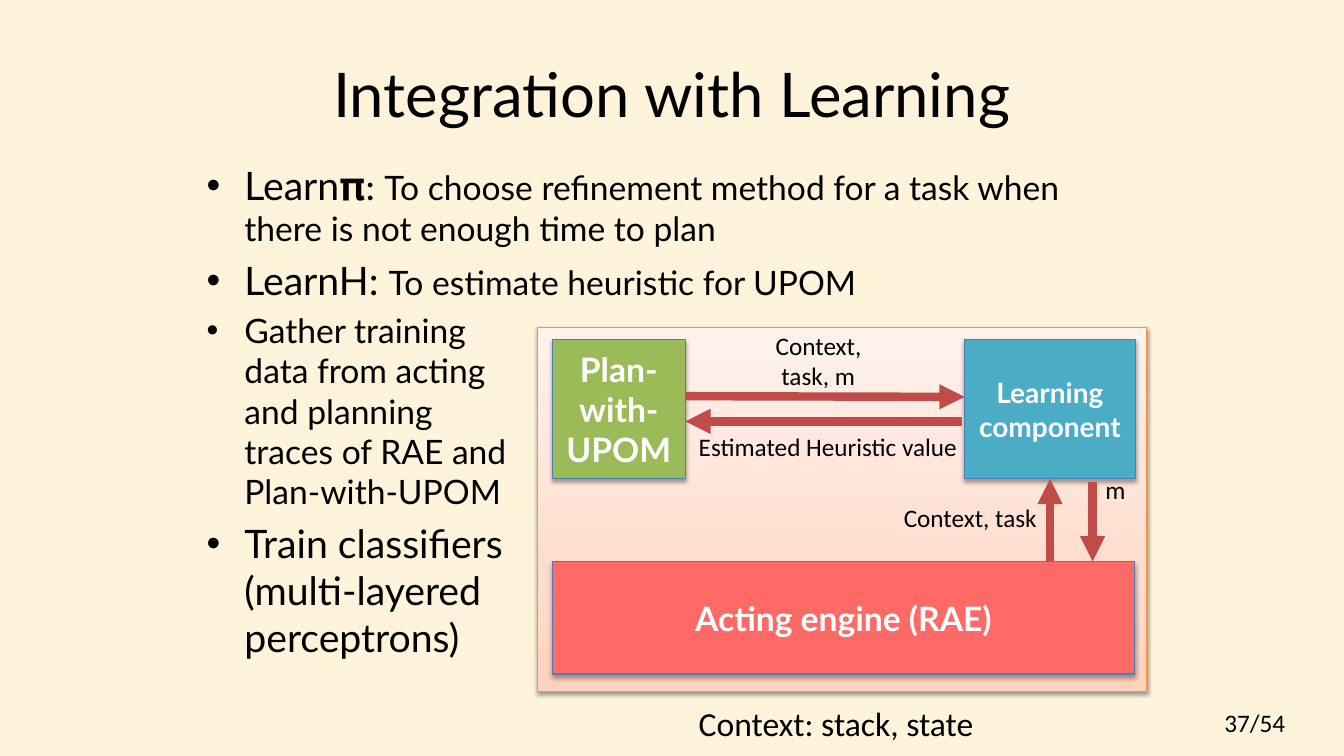
from lxml import etree
from pptx import Presentation
from pptx.dml.color import RGBColor
from pptx.enum.shapes import MSO_CONNECTOR, MSO_SHAPE
from pptx.enum.text import MSO_ANCHOR, PP_ALIGN
from pptx.oxml import parse_xml
from pptx.oxml.ns import nsdecls, qn
from pptx.util import Pt

RECTANGLE = MSO_SHAPE.RECTANGLE
STRAIGHT = MSO_CONNECTOR.STRAIGHT
CENTER = PP_ALIGN.CENTER
MIDDLE = MSO_ANCHOR.MIDDLE
BOTTOM_SIDE = 2
TITLE_ONLY = 5
BLACK, WHITE, ARROW_RED = "000000", "FFFFFF", "BF4C48"

BULLETS = [
    [("Learn", 28, "Lato"), ("𝛑: ", 28, "Calibri"),
     ("To choose refinement method for a task when there is not enough time to plan", 24, "Lato")],
    [("LearnH: ", 28, "Lato"), ("To estimate heuristic for UPOM", 24, "Lato")],
    [("Gather training\ndata from acting\nand planning\ntraces of RAE and\nPlan-with-UPOM", 24, "Lato")],
    [("Train classifiers\n(multi-layered\nperceptrons)", 28, "Lato")],
]
LABELS = [
    ("Context, task", 18, (638.5, 355.5, 122, 29)),
    ("m", 18, (782.5, 335.5, 122, 29)),
    ("Context,\n task, m", 18, (547, 232.5, 122, 51)),
    ("Estimated Heuristic value", 18, (492, 304.5, 250, 29)),
    ("Context: stack, state", 24, (492, 498.5, 274, 36)),
    ("37/54", 18, (867.5, 502, 88.5, 29)),
]
PANEL_STOPS = [(0, "FFD2BD"), (35, "FFDED0"), (100, "FFF2ED")]


def color(value):
    return RGBColor.from_string(value)


def place(shape, area):
    for name, value in zip(("left", "top", "width", "height"), area):
        setattr(shape, name, Pt(value))


def add_text(para, text, size, font, shade=BLACK, bold=False):
    for index, line in enumerate(text.split("\n")):
        if index:
            para.add_line_break()
        span = para.add_run()
        span.text = line
        for name, value in {"size": Pt(size), "name": font, "bold": bold}.items():
            setattr(span.font, name, value)
        span.font.color.rgb = color(shade)


def add_label(page, text, size, area):
    box = page.shapes.add_textbox(*map(Pt, area))
    box.text_frame.word_wrap = True
    add_text(box.text_frame.paragraphs[0], text, size, "Calibri")


def add_bullets(page, area):
    frame = page.shapes.add_textbox(*map(Pt, area)).text_frame
    frame.word_wrap = True
    for index, spans in enumerate(BULLETS):
        para = frame.add_paragraph() if index else frame.paragraphs[0]
        properties = para._p.get_or_add_pPr()
        properties.set("marL", str(Pt(27)))
        properties.set("indent", str(-Pt(27)))
        etree.SubElement(properties, qn("a:buFont"), typeface="Arial")
        etree.SubElement(properties, qn("a:buChar"), char="•")
        if index:
            para.space_before = Pt(spans[0][1] * 0.2)
        for text, size, font in spans:
            add_text(para, text, size, font)


def add_shadow(shape, alpha, distance):
    shape.shadow.inherit = False
    effects = shape._element.spPr.find(qn("a:effectLst"))
    effects.append(parse_xml(
        f'<a:outerShdw {nsdecls("a")} blurRad="{Pt(3.1)}" dist="{Pt(distance)}" dir="5400000" rotWithShape="0">'
        f'<a:srgbClr val="{BLACK}"><a:alpha val="{alpha * 1000}"/></a:srgbClr></a:outerShdw>'))


def add_rectangle(page, area, outline):
    shape = page.shapes.add_shape(RECTANGLE, *map(Pt, area))
    shape.line.color.rgb = color(outline)
    shape.line.width = Pt(0.75)
    return shape


def add_panel(page, area):
    panel = add_rectangle(page, area, "F69240")
    stops = "".join(f'<a:gs pos="{position * 1000}"><a:srgbClr val="{shade}"/></a:gs>'
                    for position, shade in PANEL_STOPS)
    panel._element.spPr.insert(2, parse_xml(
        f'<a:gradFill {nsdecls("a")} rotWithShape="1"><a:gsLst>{stops}</a:gsLst>'
        '<a:lin ang="16200000" scaled="0"/></a:gradFill>'))
    add_shadow(panel, 38, 1.6)


def add_component(page, text, size, fill, area):
    shape = add_rectangle(page, area, "4B7EBC")
    shape.fill.solid()
    shape.fill.fore_color.rgb = color(fill)
    add_shadow(shape, 35, 1.8)
    shape.text_frame.word_wrap = True
    shape.text_frame.vertical_anchor = MIDDLE
    para = shape.text_frame.paragraphs[0]
    para.alignment = CENTER
    add_text(para, text, size, "Lato", WHITE, True)
    return shape


def add_arrow(page, *ends):
    arrow = page.shapes.add_connector(STRAIGHT, *map(Pt, ends))
    arrow.line.color.rgb = color(ARROW_RED)
    arrow.line.width = Pt(6)
    properties = arrow._element.spPr
    etree.SubElement(properties.find(qn("a:ln")), qn("a:tailEnd"), type="triangle")
    etree.SubElement(properties, qn("a:effectLst"))
    return arrow


def add_title(page, text):
    title = page.shapes.title
    place(title, (48, 21.5, 864, 90))
    title.text_frame.vertical_anchor = MIDDLE
    para = title.text_frame.paragraphs[0]
    para.alignment = CENTER
    add_text(para, text, 44, "Lato")


def main():
    deck = Presentation()
    deck.slide_width, deck.slide_height = Pt(960), Pt(540)
    page = deck.slides.add_slide(deck.slide_layouts[TITLE_ONLY])
    page.background.fill.solid()
    page.background.fill.fore_color.rgb = color("FEF4DB")

    add_title(page, "Integration with Learning")
    add_bullets(page, (140.5, 111.5, 633, 386.5))
    add_panel(page, (384, 234, 435, 260))
    add_component(page, "Plan-with-UPOM", 24, "9BBB59", (394.5, 242.5, 95, 99.5))
    add_component(page, "Acting engine (RAE)", 24, "FF6966", (394.5, 401, 416, 80.5))
    learning = add_component(page, "Learning component", 20, "4BACC6", (689, 242.5, 122, 99.5))

    add_arrow(page, 489.5, 283, 689, 283.5)
    add_arrow(page, 687.5, 301, 489.5, 301)
    add_arrow(page, 780.5, 344, 780.5, 401)
    add_arrow(page, 750, 401, 750, 344).end_connect(learning, BOTTOM_SIDE)
    for label in LABELS:
        add_label(page, *label)
    deck.save("out.pptx")


if __name__ == "__main__":
    main()
